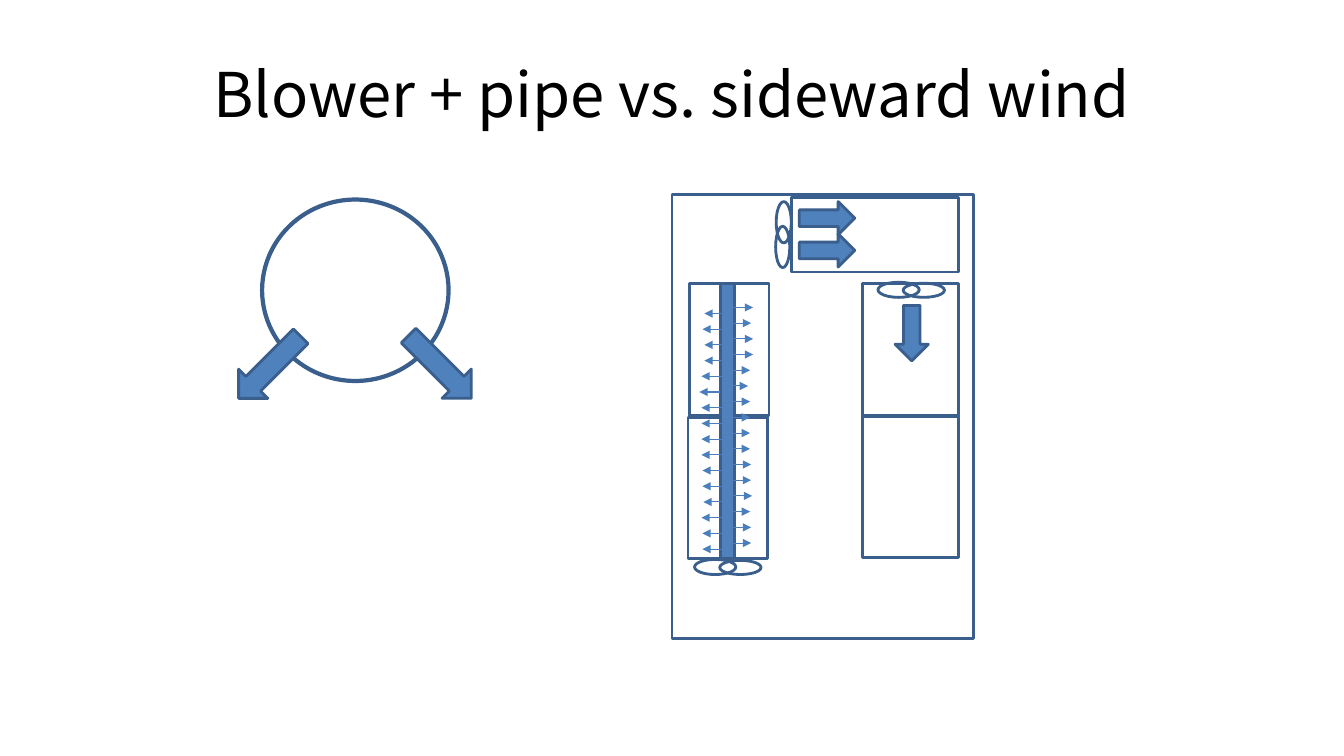
from dataclasses import dataclass

from lxml import etree
from pptx import Presentation
from pptx.dml.color import RGBColor
from pptx.enum.shapes import MSO_CONNECTOR, MSO_SHAPE
from pptx.enum.text import MSO_ANCHOR, PP_ALIGN
from pptx.oxml.ns import qn
from pptx.shapes.group import GroupShape
from pptx.util import Emu, Inches, Pt

RECTANGLE = MSO_SHAPE.RECTANGLE
OVAL = MSO_SHAPE.OVAL
UP_ARROW = MSO_SHAPE.UP_ARROW
DOWN_ARROW = MSO_SHAPE.DOWN_ARROW
STRAIGHT = MSO_CONNECTOR.STRAIGHT

FONT = "Noto Sans CJK SC"
COLOURS = {"outline": "3A5F8C", "fill": "4F81BD", "jet": "4B7EBC", "text": "000000"}

# Grid of 160 columns by 90 rows
SLIDE_WIDTH, SLIDE_HEIGHT = Inches(13.3333), Inches(7.5)
COLUMN, ROW = SLIDE_WIDTH / 160, SLIDE_HEIGHT / 90


@dataclass(frozen=True)
class Part:
    kind: MSO_SHAPE
    left: float
    top: float
    width: float
    height: float
    rotation: float = 0
    filled: bool = False
    weight: float = 2


@dataclass(frozen=True)
class Fan:
    left: float
    top: float
    upright: bool = False


ROOM = [
    Part(RECTANGLE, 80, 23.2, 35.9, 52.8),
    Part(RECTANGLE, 94.2, 23.52, 19.92, 8.88),
    Part(RECTANGLE, 100.56, 35.88, 15.72, 11.4, 90),
    Part(RECTANGLE, 99.96, 52.32, 16.8, 11.4, 90),
    Part(RECTANGLE, 78.96, 36.84, 15.72, 9.48, 90),
    Part(RECTANGLE, 78.24, 53.4, 16.8, 9.48, 90),
]
FANS = [Fan(82.68, 66.6), Fan(104.52, 33.6), Fan(90.84, 25.56, upright=True)]
WIND_AND_PIPE = [
    Part(UP_ARROW, 96.48, 22.68, 3.96, 6.6, 90, True),
    Part(UP_ARROW, 96.48, 26.52, 3.96, 6.6, 90, True),
    Part(UP_ARROW, 106.56, 36.36, 3.96, 6.6, 180, True),
    Part(RECTANGLE, 85.8, 33.72, 1.68, 32.76, filled=True),
]
PIPE_SECTION = [
    Part(OVAL, 31.2, 23.76, 22.2, 21.6, weight=3),
    Part(DOWN_ARROW, 29.64, 38.52, 4.92, 10.44, 45, True),
    Part(DOWN_ARROW, 49.92, 38.4, 4.92, 10.56, 315, True),
]

# Air jets: start column of each right-hand jet, from top to bottom
JET_COLUMNS = [87.24, 87, 87.24, 87.24, 86.88, 86.64, 86.88, 86.88,
               86.88, 86.88, 87, 87, 87.12, 86.88, 87, 87]
JET_TOP, JET_PITCH, JET_LENGTH = 36.6, 1.87, 2.42
LEFT_JET_SHIFT, LEFT_JET_DROP = -0.96, 0.72


def across(columns: float) -> Emu:
    return Emu(round(columns * COLUMN))


def down(rows: float) -> Emu:
    return Emu(round(rows * ROW))


def colour(name: str) -> RGBColor:
    return RGBColor.from_string(COLOURS[name])


def draw_part(group: GroupShape, part: Part) -> None:
    shape = group.shapes.add_shape(part.kind, across(part.left), down(part.top),
                                   across(part.width), down(part.height))
    shape.shadow.inherit = False
    shape.rotation = part.rotation
    shape.line.color.rgb = colour("outline")
    shape.line.width = Pt(part.weight)
    if part.filled:
        shape.fill.solid()
        shape.fill.fore_color.rgb = colour("fill")
    else:
        shape.fill.background()


def draw_fan(group: GroupShape, fan: Fan) -> None:
    shift, drop, rotation = (-0.12, 3, 90) if fan.upright else (3, 0.12, 0)
    draw_part(group, Part(OVAL, fan.left, fan.top, 4.92, 1.8, rotation))
    draw_part(group, Part(OVAL, fan.left + shift, fan.top + drop, 4.92, 1.68, rotation))


def draw_jet(group: GroupShape, start: float, row: float, length: float) -> None:
    jet = group.shapes.add_connector(STRAIGHT, across(start), down(row),
                                     across(start + length), down(row))
    jet.line.color.rgb = colour("jet")
    jet.line.width = Pt(0.75)
    etree.SubElement(jet.line._get_or_add_ln(), qn("a:tailEnd"), type="triangle")
    etree.SubElement(jet._element.spPr, qn("a:effectLst"))


def main() -> None:
    presentation = Presentation()
    presentation.slide_width, presentation.slide_height = SLIDE_WIDTH, SLIDE_HEIGHT
    slide = presentation.slides.add_slide(presentation.slide_layouts[5])

    # Title
    title = slide.shapes.title
    title.left, title.top = across(8), down(3.6)
    title.width, title.height = across(144), down(15)
    title.text_frame.text = "Blower + pipe vs. sideward wind"
    title.text_frame.vertical_anchor = MSO_ANCHOR.MIDDLE
    paragraph = title.text_frame.paragraphs[0]
    paragraph.alignment = PP_ALIGN.CENTER
    paragraph.font.name = FONT
    paragraph.font.size = Pt(44)
    paragraph.font.color.rgb = colour("text")

    # Room plan with beds, fans, wind and pipe
    plan = slide.shapes.add_group_shape()
    for part in ROOM:
        draw_part(plan, part)
    for fan in FANS:
        draw_fan(plan, fan)
    for part in WIND_AND_PIPE:
        draw_part(plan, part)

    # Air jets on both sides of the pipe
    for index, start in enumerate(JET_COLUMNS):
        row = JET_TOP + index * JET_PITCH
        draw_jet(plan, start, row, JET_LENGTH)
        draw_jet(plan, start + LEFT_JET_SHIFT, row + LEFT_JET_DROP, -JET_LENGTH)

    # Cross-section of the pipe
    section = slide.shapes.add_group_shape()
    for part in PIPE_SECTION:
        draw_part(section, part)

    presentation.save("out.pptx")


if __name__ == "__main__":
    main()
